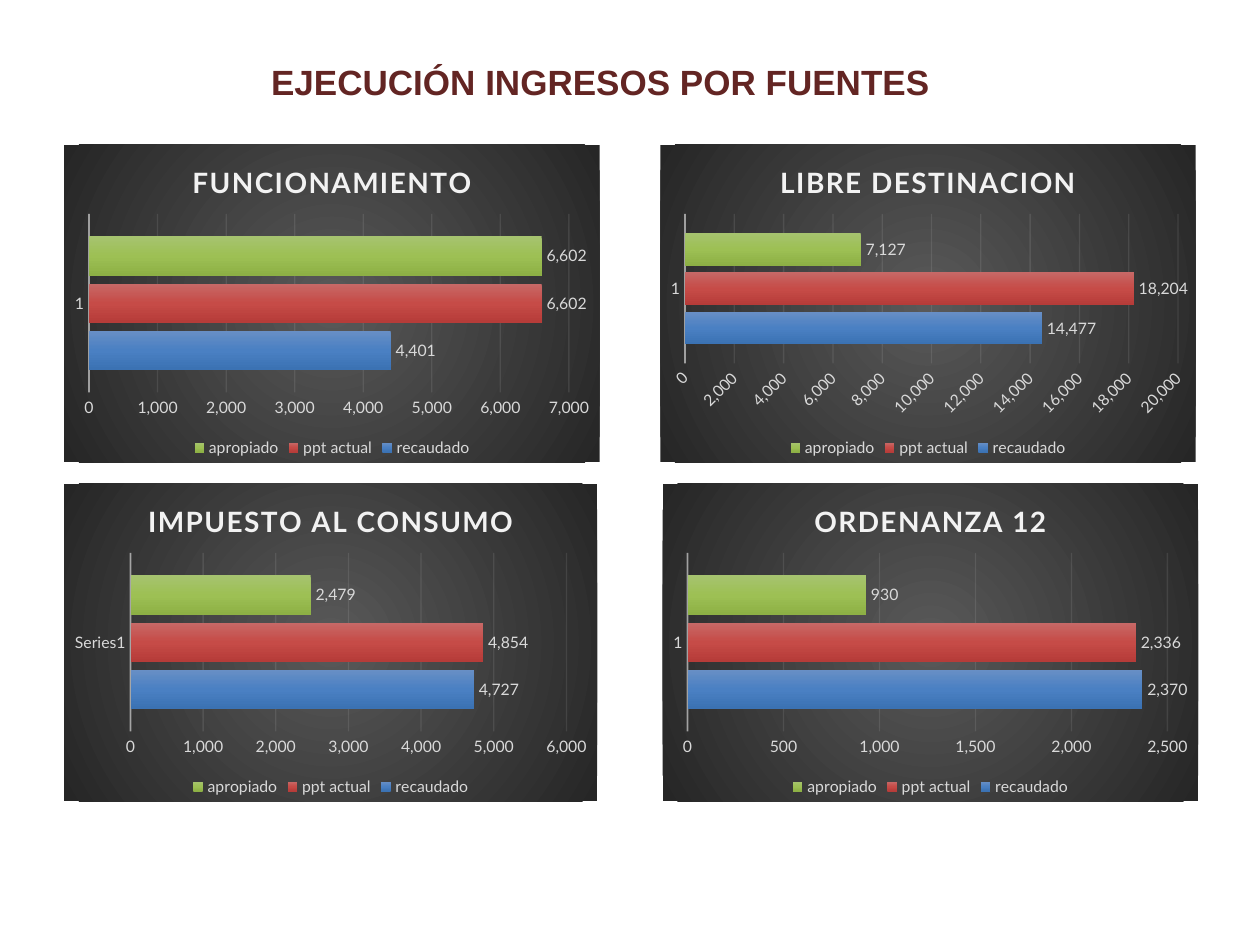
from dataclasses import dataclass

from lxml import etree
from pptx import Presentation
from pptx import util as u
from pptx.chart.data import CategoryChartData
from pptx.dml.color import RGBColor
from pptx.enum import chart as ch
from pptx.enum import text
from pptx.oxml import parse_xml
from pptx.oxml.ns import nsdecls, qn


@dataclass(frozen=True)
class Theme:
    heading_font: str = "Arial"
    chart_font: str = "Lato"
    heading_color: str = "632523"
    title_color: str = "F2F2F2"
    label_color: str = "D9D9D9"
    line_color: str = "F2F2F2"
    heading_size: int = 20
    title_size: int = 16
    label_size: int = 9
    panel: tuple = ("595959", "262626")
    bars: tuple = (
        ("688FC5", "4A80C3", "3B72B3"),
        ("C76967", "C64B47", "B63C39"),
        ("A6C36F", "9DC054", "8DB045"),
    )


def gradient(colors, direction):
    """Return a gradFill with evenly spaced stops."""
    step = 100000 // (len(colors) - 1)
    stops = "".join(
        f'<a:gs pos="{i * step}"><a:srgbClr val="{color}"/></a:gs>'
        for i, color in enumerate(colors)
    )
    return parse_xml(
        f'<a:gradFill {nsdecls("a")} rotWithShape="1">'
        f"<a:gsLst>{stops}</a:gsLst>{direction}</a:gradFill>"
    )


DOWNWARD = '<a:lin ang="5400000" scaled="0"/>'
FROM_CENTRE = (
    '<a:path path="circle">'
    '<a:fillToRect l="50000" t="50000" r="50000" b="50000"/></a:path>'
)


class Deck:
    """Style and current slide; places are shares of the slide in percent."""

    def __init__(self, theme):
        self.theme = theme
        self.prs = Presentation()
        self.prs.slide_width, self.prs.slide_height = u.Inches(10), u.Inches(7.5)
        self.slide = self.prs.slides.add_slide(self.prs.slide_layouts[5])

    def place(self, left, top, width, height):
        across, down = self.prs.slide_width / 100, self.prs.slide_height / 100
        return (round(left * across), round(top * down),
                round(width * across), round(height * down))

    def style(self, font, name, size, color, bold=False):
        font.name, font.size, font.bold = name, u.Pt(size), bold
        font.color.rgb = RGBColor.from_string(color)

    def label_style(self, font):
        self.style(font, self.theme.chart_font, self.theme.label_size,
                   self.theme.label_color)

    def line(self, line_format, width, opacity):
        line_format.width = u.Pt(width)
        line_format.color.rgb = RGBColor.from_string(self.theme.line_color)
        color = line_format._ln.find(".//" + qn("a:srgbClr"))
        etree.SubElement(color, qn("a:alpha"), val=str(opacity * 1000))

    def heading(self, words, place):
        title = self.slide.shapes.title
        title.left, title.top, title.width, title.height = self.place(*place)
        frame = title.text_frame
        frame.text = words
        frame.word_wrap = True
        frame.auto_size = text.MSO_AUTO_SIZE.SHAPE_TO_FIT_TEXT
        frame.vertical_anchor = text.MSO_ANCHOR.TOP
        paragraph = frame.paragraphs[0]
        paragraph.alignment = text.PP_ALIGN.CENTER
        self.style(paragraph.font, self.theme.heading_font,
                   self.theme.heading_size, self.theme.heading_color, True)

    def bar_panel(self, name, category, values, place):
        data = CategoryChartData(number_format="#,##0")
        data.categories = [category]
        for source, value in values.items():
            data.add_series(source, [value])
        chart = self.slide.shapes.add_chart(
            ch.XL_CHART_TYPE.BAR_CLUSTERED, *self.place(*place), data).chart
        self.label_style(chart.font)
        self.panel_background(chart)
        self.panel_title(chart, name)
        self.axes(chart)
        self.bars(chart.plots[0])
        chart.has_legend = True
        chart.legend.position = ch.XL_LEGEND_POSITION.BOTTOM
        chart.legend.include_in_layout = False
        self.label_style(chart.legend.font)

    def panel_background(self, chart):
        properties = parse_xml(
            f'<c:spPr {nsdecls("c", "a")}><a:ln><a:noFill/></a:ln></c:spPr>')
        properties.insert(0, gradient(self.theme.panel, FROM_CENTRE))
        chart._chartSpace.find(qn("c:txPr")).addprevious(properties)

    def panel_title(self, chart, name):
        chart.has_title = True
        chart.chart_title.include_in_layout = False
        frame = chart.chart_title.text_frame
        frame.text = name
        font = frame.paragraphs[0].font
        self.style(font, self.theme.chart_font, self.theme.title_size,
                   self.theme.title_color, True)
        font._element.set("spc", "100")

    def axes(self, chart):
        for axis in (chart.category_axis, chart.value_axis):
            axis.major_tick_mark = axis.minor_tick_mark = ch.XL_TICK_MARK.NONE
            self.label_style(axis.tick_labels.font)
        self.line(chart.category_axis.format.line, 1, 54)
        amounts = chart.value_axis
        amounts.format.line.fill.background()
        amounts.has_major_gridlines = True
        self.line(amounts.major_gridlines.format.line, 0.75, 10)
        amounts.tick_labels.number_format = "#,##0"
        amounts.tick_labels.number_format_is_linked = False

    def bars(self, plot):
        plot.gap_width, plot.overlap = 115, -20
        plot.vary_by_categories = False
        for series, colors in zip(plot.series, self.theme.bars):
            series.invert_if_negative = False
            series.format.line.fill.background()
            series._element.spPr.insert(0, gradient(colors, DOWNWARD))
            labels = series.data_labels
            labels.show_value = True
            labels.position = ch.XL_LABEL_POSITION.OUTSIDE_END
            labels.number_format = "#,##0"
            labels.number_format_is_linked = False
            self.label_style(labels.font)


SOURCES = ("recaudado", "ppt actual", "apropiado")
UPPER, LOWER, PANEL_HEIGHT = 15.33, 51.2, 33.6
PANELS = (
    # name, category, amounts by source, left, top, width
    ("FUNCIONAMIENTO", "1", (4401, 6602, 6602), 5.1, UPPER, 42.5),
    ("LIBRE DESTINACION", "1", (14477, 18204, 7127), 52.4, UPPER, 42.5),
    ("IMPUESTO AL CONSUMO", "Series1", (4727, 4854, 2479), 5.1, LOWER, 42.3),
    ("ORDENANZA 12", "1", (2370, 2336, 930), 52.6, LOWER, 42.5),
)


def main():
    deck = Deck(Theme())
    deck.heading("EJECUCIÓN INGRESOS POR FUENTES", (12.2, 5.73, 70.9, 5.87))
    for name, category, amounts, left, top, width in PANELS:
        deck.bar_panel(name, category, dict(zip(SOURCES, amounts)),
                       (left, top, width, PANEL_HEIGHT))
    deck.prs.save("out.pptx")


if __name__ == "__main__":
    main()
